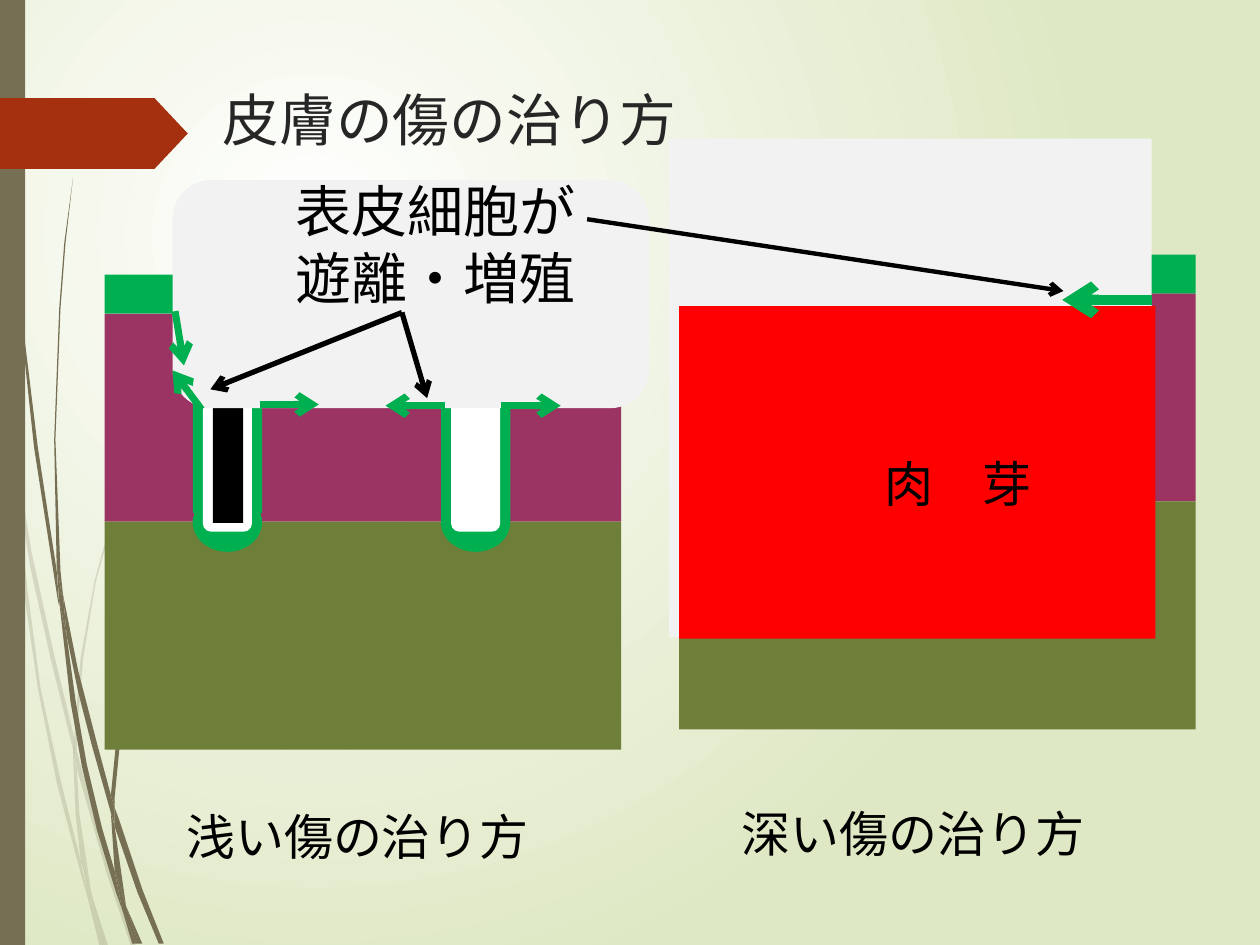
from dataclasses import dataclass
from typing import Any

from lxml.etree import SubElement
from pptx import Presentation
from pptx.dml.color import RGBColor
from pptx.enum.shapes import MSO_CONNECTOR, MSO_SHAPE
from pptx.enum.text import MSO_ANCHOR
from pptx.oxml.ns import qn
from pptx.util import Inches, Pt

BROWN, RUST, BLACK, WHITE = "766F54", "A53010", "000000", "FFFFFF"
EPIDERMIS, DERMIS, FAT = "00B050", "9C3463", "6D7F39"
GRANULATION, GAP = "FF0000", "F2F2F2"

PALE_WISPS = [
    [(8, 350), (6, 322), (0, 282), (0, 299), (7, 344)],
    [(40, 522), (59, 599), (59, 586), (43, 520), (25, 438), (10, 345), (12, 376), (24, 450)],
    [(64, 607), (61, 596), (61, 610), (85, 694), (104, 751), (108, 751), (88, 692)],
    [(83, 751), (86, 751), (73, 711)],
    [(64, 683), (48, 619), (32, 545), (22, 469), (12, 376), (8, 350), (19, 470),
     (30, 546), (45, 621), (64, 693), (70, 714), (69, 707)],
    [(58, 599), (60, 646), (64, 683), (67, 692), (73, 711), (72, 706), (63, 646), (61, 610)],
    [(61, 584), (66, 522), (76, 462), (92, 404), (111, 349), (134, 296), (159, 245),
     (187, 198), (201, 175), (217, 154), (201, 175), (186, 197), (158, 244), (133, 295),
     (110, 348), (91, 403), (75, 461), (64, 522), (59, 584), (59, 586), (61, 596)],
    [(70, 714), (79, 751), (82, 751)],
    [(61, 608), (61, 596), (59, 586), (58, 599)],
    [(67, 692), (65, 683), (69, 707), (70, 714), (82, 751), (83, 751), (73, 711)],
]
DARK_WISPS = [
    [(5, 110), (14, 233), (27, 355), (46, 477), (47, 481), (45, 453), (30, 355),
     (15, 232), (6, 109), (4, 48), (3, 0), (2, 0), (3, 48)],
    [(73, 592), (88, 645), (88, 631), (77, 590), (62, 532), (50, 472), (53, 505), (62, 549)],
    [(94, 649), (91, 641), (91, 656), (109, 708), (126, 749), (130, 749), (113, 706)],
    [(91, 691), (81, 657), (69, 607), (60, 556), (53, 505), (47, 477), (56, 557),
     (65, 608), (77, 659), (92, 708), (97, 722), (96, 717)],
    [(50, 472), (48, 453), (44, 349), (48, 245), (52, 193), (58, 141), (51, 193),
     (47, 245), (43, 349), (45, 449), (49, 472)],
    [(110, 749), (113, 749), (100, 719)],
    [(47, 477), (53, 505), (50, 472), (49, 472), (45, 449)],
    [(91, 633), (95, 592), (103, 552), (115, 513), (131, 476), (149, 440), (169, 406),
     (191, 374), (216, 344), (191, 373), (168, 405), (148, 439), (129, 474), (113, 512),
     (101, 551), (92, 591), (88, 631), (91, 641)],
    [(97, 722), (105, 749), (108, 749)],
    [(88, 645), (91, 691), (96, 706), (100, 719), (91, 656)],
    [(88, 645), (90, 651), (91, 656), (91, 641), (88, 631)],
    [(96, 706), (91, 691), (96, 717), (97, 722), (108, 749), (110, 749), (100, 719)],
]


def colour(code):
    return RGBColor.from_string(code)


@dataclass
class Painter:
    page: Any
    text_font: str = "Times New Roman"
    title_font: str = "Quicksand"

    def background(self, inner, outer):
        fill = self.page.background.fill
        fill.gradient()
        for stop, code, position in zip(fill.gradient_stops, (inner, outer), (0, 1)):
            stop.color.rgb = colour(code)
            stop.position = position
        gradient = next(self.page.element.iter(qn("a:gradFill")))
        gradient.remove(gradient.find(qn("a:lin")))
        circle = SubElement(gradient, qn("a:path"), {"path": "circle"})
        SubElement(circle, qn("a:fillToRect"), l="50000", t="50000", r="100000", b="100000")

    def finish(self, shape, code, opacity=100):
        shape.shadow.inherit = False
        shape.line.fill.background()
        shape.fill.solid()
        shape.fill.fore_color.rgb = colour(code)
        if opacity < 100:
            tint = next(shape.element.spPr.iter(qn("a:srgbClr")))
            SubElement(tint, qn("a:alpha"), val=str(opacity * 1000))

    def block(self, left, top, width, height, code, kind=MSO_SHAPE.RECTANGLE, adjust=None):
        shape = self.page.shapes.add_shape(
            kind, Inches(left), Inches(top), Inches(width), Inches(height))
        if adjust is not None:
            shape.adjustments[0] = adjust
        self.finish(shape, code)

    def rounded(self, left, top, width, height, code):
        self.block(left, top, width, height, code, MSO_SHAPE.ROUNDED_RECTANGLE, 0.17)

    def wisp(self, points, opacity):
        builder = self.page.shapes.build_freeform(*points[0], scale=Inches(0.01))
        builder.add_line_segments(points[1:], close=True)
        self.finish(builder.convert_to_shape(), BROWN, opacity)

    def arrow(self, start, end, code, weight):
        line = self.page.shapes.add_connector(
            MSO_CONNECTOR.STRAIGHT, *map(Inches, start + end))
        line.line.color.rgb = colour(code)
        line.line.width = Pt(weight)
        SubElement(line.line._get_or_add_ln(), qn("a:tailEnd"), type="arrow")
        SubElement(line._element.spPr, qn("a:effectLst"))

    def text(self, left, top, width, height, words, size=28, code=BLACK, font=None,
             anchor=MSO_ANCHOR.TOP):
        box = self.page.shapes.add_textbox(
            Inches(left), Inches(top), Inches(width), Inches(height))
        frame = box.text_frame
        frame.word_wrap = True
        frame.vertical_anchor = anchor
        para = frame.paragraphs[0]
        para.text = words
        para.font.size = Pt(size)
        para.font.name = font or self.text_font
        para.font.color.rgb = colour(code)

    def skin(self, left, top):
        for height, code in ((0.31, EPIDERMIS), (1.65, DERMIS), (1.81, FAT)):
            self.block(left, top, 4.1, height, code)
            top += height


def draw_theme(painter):
    painter.background(WHITE, "DFE8C4")
    for wisps, opacity in ((PALE_WISPS, 20), (DARK_WISPS, 100)):
        for points in wisps:
            painter.wisp(points, opacity)
    painter.block(0, 0, 0.2, 7.5, BROWN)
    painter.block(0, 0.78, 1.49, 0.56, RUST, MSO_SHAPE.PENTAGON, 0.47)
    painter.text(1.67, 0.6, 5.62, 0.69, "皮膚の傷の治り方", 32.4, "262626",
                 painter.title_font, MSO_ANCHOR.MIDDLE)


def draw_shallow_wound(painter):
    painter.skin(0.83, 2.18)
    for left, top, inner_top in ((1.53, 2.18, 1.94), (3.5, 2.25, 2.02)):
        painter.block(left, top, 0.55, 1.89, EPIDERMIS)
        painter.block(left, 3.91, 0.55, 0.47, EPIDERMIS, MSO_SHAPE.OVAL)
        painter.rounded(left + 0.08, inner_top, 0.39, 4.22 - inner_top, WHITE)
    painter.block(1.69, 1.55, 0.24, 2.6, BLACK)
    painter.rounded(1.37, 1.43, 3.78, 1.81, GAP)
    for start, end in (
        ((3.98, 3.22), (4.45, 3.22)),
        ((3.53, 3.22), (3.06, 3.22)),
        ((2.06, 3.21), (2.53, 3.21)),
        ((1.39, 2.47), (1.46, 2.9)),
        ((1.6, 3.25), (1.37, 2.94)),
    ):
        painter.arrow(start, end, EPIDERMIS, 4)
    painter.text(2.25, 1.35, 2.6, 1.18, "表皮細胞が遊離・増殖", 32)
    for end in ((1.67, 3.09), (3.39, 3.16)):
        painter.arrow((3.19, 2.48), end, BLACK, 3)
    painter.text(1.38, 6.35, 3.07, 0.57, "浅い傷の治り方")


def draw_deep_wound(painter):
    painter.text(5.79, 6.33, 3.07, 0.57, "深い傷の治り方")
    painter.skin(5.39, 2.02)
    painter.block(5.31, 1.1, 3.83, 3.96, GAP)
    painter.block(5.39, 2.43, 3.78, 2.64, GRANULATION)
    painter.text(6.92, 3.55, 1.71, 0.6, "肉　芽")
    painter.arrow((9.14, 2.38), (8.43, 2.38), EPIDERMIS, 6)
    painter.arrow((4.66, 1.74), (8.44, 2.31), BLACK, 2.5)


def main():
    deck = Presentation()
    deck.slide_width, deck.slide_height = Inches(10), Inches(7.5)
    painter = Painter(deck.slides.add_slide(deck.slide_layouts[6]))
    draw_theme(painter)
    draw_shallow_wound(painter)
    draw_deep_wound(painter)
    deck.save("out.pptx")


if __name__ == "__main__":
    main()
